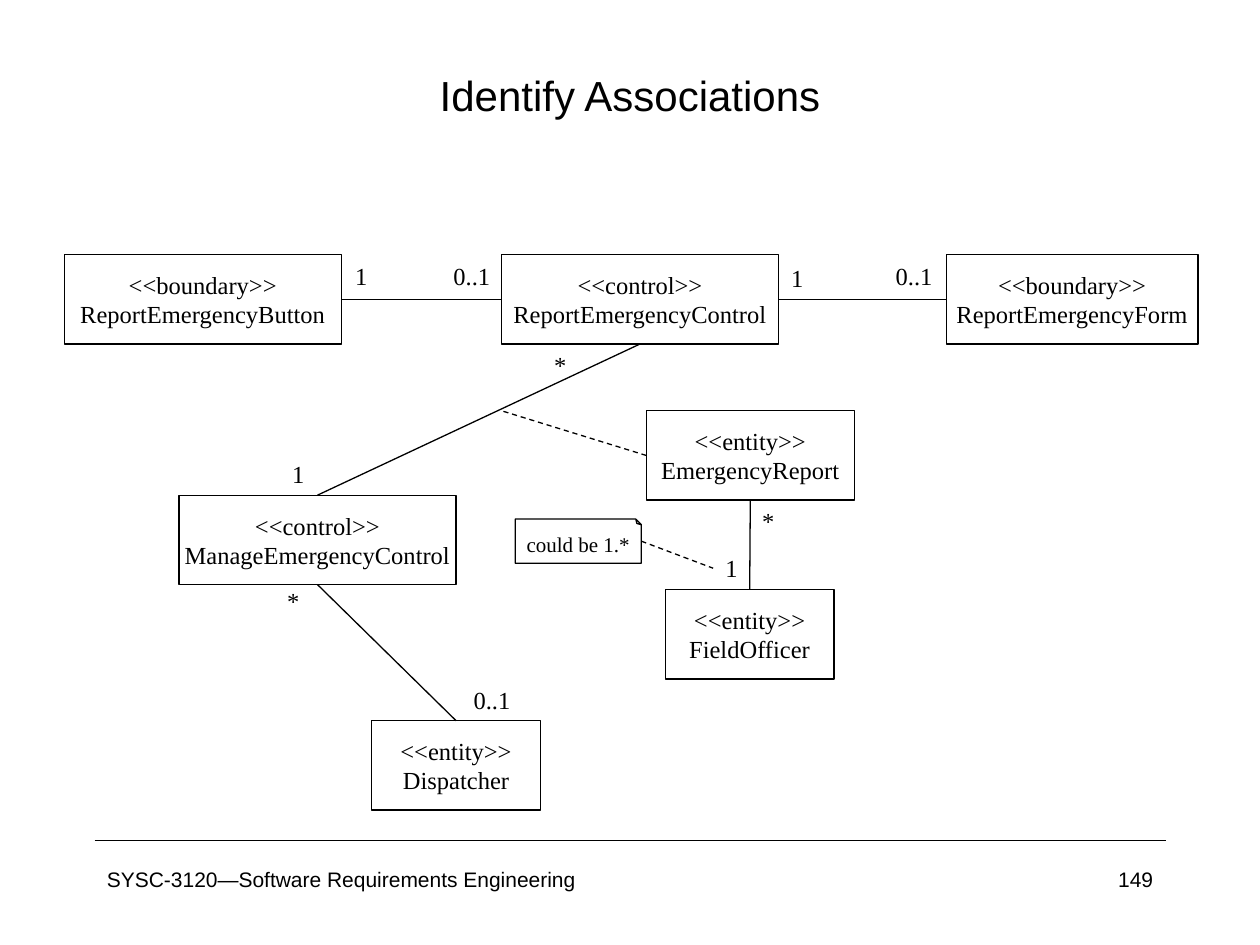
from lxml.etree import SubElement
from pptx import Presentation
from pptx.dml.color import RGBColor
from pptx.enum.dml import MSO_LINE
from pptx.enum.shapes import MSO_CONNECTOR, MSO_SHAPE
from pptx.enum.text import MSO_ANCHOR, MSO_AUTO_SIZE, PP_ALIGN
from pptx.oxml.ns import qn
from pptx.util import Inches, Pt

COLORS = {"ink": "000000"}
SANS, SERIF = "Arial", "Times New Roman"
W, H = Inches(10), Inches(7.5)
UNIT = W / 100
TOP, BOTTOM, LEFT, RIGHT = 0, 2, 1, 3
BOX_H, LABEL_H = 7.1, 3.3

FRAME = [
    ("Identify Associations", 7.5, 4.6, 85, 5.8, 24, PP_ALIGN.CENTER, MSO_ANCHOR.MIDDLE),
    ("SYSC-3120—Software Requirements Engineering", 7.5, 68.3, 42.5, 5, 12, PP_ALIGN.LEFT, MSO_ANCHOR.TOP),
    ("149", 71.7, 68.3, 20.8, 5, 12, PP_ALIGN.RIGHT, MSO_ANCHOR.TOP),
]
CLASSES = [
    ("boundary", "ReportEmergencyButton", 5.1, 20.2, 22),
    ("control", "ReportEmergencyControl", 39.8, 20.2, 22),
    ("boundary", "ReportEmergencyForm", 75.1, 20.2, 20),
    ("control", "ManageEmergencyControl", 14.2, 39.3, 22),
    ("entity", "EmergencyReport", 51.3, 32.6, 16.5),
    ("entity", "FieldOfficer", 52.8, 46.8, 13.4),
    ("entity", "Dispatcher", 29.5, 57.2, 13.4),
]
ASSOCIATIONS = [
    ("ReportEmergencyButton", RIGHT, "ReportEmergencyControl", LEFT),
    ("ReportEmergencyForm", LEFT, "ReportEmergencyControl", RIGHT),
    ("ReportEmergencyControl", BOTTOM, "ManageEmergencyControl", TOP),
    ("EmergencyReport", BOTTOM, "FieldOfficer", TOP),
    ("ManageEmergencyControl", BOTTOM, "Dispatcher", TOP),
]
MULTIPLICITIES = [
    ("1", 27.2, 20.2), ("0..1", 35, 20.2),
    ("1", 61.8, 20.4), ("0..1", 70.1, 20.2),
    ("*", 43, 27.3), ("1", 22.2, 35.9),
    ("*", 59.5, 39.7), ("1", 56.6, 43.4),
    ("*", 21.8, 46), ("0..1", 36.6, 53.9),
]
NOTE = ("could be 1.*", 40.9, 41.2, 10, 3.5)
DASHED = [("EmergencyReport", LEFT, 39.8, 32.6), ("note", RIGHT, 56.6, 45.1)]

prs = Presentation()
prs.slide_width, prs.slide_height = W, H
s = prs.slides.add_slide(prs.slide_layouts[6])
ink = RGBColor.from_string(COLORS["ink"])


def grid(*values):
    return [round(v * UNIT) for v in values]


def write(sp, lines, size, font, align, anchor, wrap=False):
    tf = sp.text_frame
    tf.word_wrap, tf.vertical_anchor = wrap, anchor
    for i, line in enumerate(lines):
        p = tf.add_paragraph() if i else tf.paragraphs[0]
        p.alignment = align
        r = p.add_run()
        r.text = line
        r.font.size, r.font.name, r.font.color.rgb = Pt(size), font, ink


def text(line, x, y, w, h, *style, wrap=False):
    sp = s.shapes.add_textbox(*grid(x, y, w, h))
    write(sp, [line], *style, wrap=wrap)
    return sp


def box(kind, lines, size, x, y, w, h):
    sp = s.shapes.add_shape(kind, *grid(x, y, w, h))
    sp.shadow.inherit = False
    sp.fill.background()
    sp.line.color.rgb, sp.line.width = ink, Pt(0.75)
    write(sp, lines, size, SERIF, PP_ALIGN.CENTER, MSO_ANCHOR.MIDDLE)
    return sp


def connect(x1=0, y1=0, x2=0, y2=0, width=0.75, dash=False):
    c = s.shapes.add_connector(MSO_CONNECTOR.STRAIGHT, *grid(x1, y1, x2, y2))
    c.line.color.rgb, c.line.width = ink, Pt(width)
    if dash:
        c.line.dash_style = MSO_LINE.DASH
    SubElement(c._element.spPr, qn("a:effectLst"))
    return c


connect(7.5, 66.7, 92.5, 66.7, width=1)
for line, x, y, w, h, size, align, anchor in FRAME:
    text(line, x, y, w, h, size, SANS, align, anchor, wrap=True)

nodes = {name: box(MSO_SHAPE.RECTANGLE, [f"<<{kind}>>", name], 14, x, y, w, BOX_H)
         for kind, name, x, y, w in CLASSES}

caption, *place = NOTE
note = nodes["note"] = box(MSO_SHAPE.FOLDED_CORNER, [caption], 12, *place)
fold = note._element.spPr.find(qn("a:prstGeom")).get_or_add_avLst()
SubElement(fold, qn("a:gd"), name="adj", fmla="val 12500")
note._element.spPr.find(qn("a:xfrm")).set("flipV", "1")
note.text_frame._txBody.find(qn("a:bodyPr")).set("rot", "10800000")

for start, start_side, end, end_side in ASSOCIATIONS:
    c = connect()
    c.begin_connect(nodes[start], start_side)
    c.end_connect(nodes[end], end_side)

for start, side, x, y in DASHED:
    c = connect(x, y, x, y, dash=True)
    c.begin_connect(nodes[start], side)

for label, x, y in MULTIPLICITIES:
    sp = text(label, x, y, 3 if len(label) == 1 else 4.9, LABEL_H,
              14, SERIF, PP_ALIGN.LEFT, MSO_ANCHOR.TOP)
    sp.text_frame.auto_size = MSO_AUTO_SIZE.SHAPE_TO_FIT_TEXT

prs.save("out.pptx")
